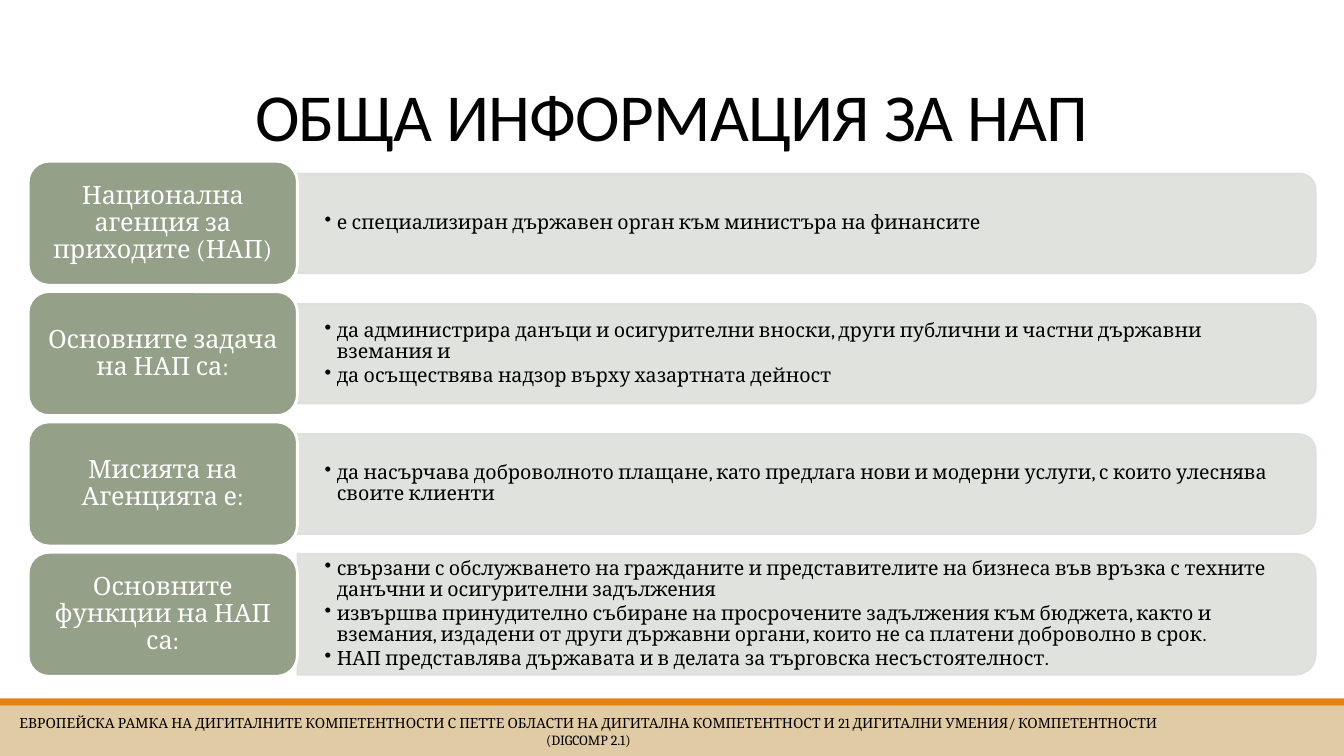
"""Builds a slide with general information about the НАП: four topics with their points."""
from lxml import etree
from pptx import Presentation
from pptx.dml.color import RGBColor
from pptx.enum.shapes import MSO_SHAPE
from pptx.enum.text import MSO_ANCHOR, PP_ALIGN
from pptx.oxml.ns import qn
from pptx.util import Inches, Pt

TITLE = "ОБЩА ИНФОРМАЦИЯ ЗА НАП"
TOPICS = [
    ("Национална агенция за приходите (НАП)", [
        "е специализиран държавен орган към министъра на финансите",
    ]),
    ("Основните задача на НАП са:", [
        "да администрира данъци и осигурителни вноски, други публични и частни държавни вземания и",
        "да осъществява надзор върху хазартната дейност",
    ]),
    ("Мисията на Агенцията е:", [
        "да насърчава доброволното плащане, като предлага нови и модерни услуги, "
        "с които улеснява своите клиенти",
    ]),
    ("Основните функции на НАП са:", [
        "свързани с обслужването на гражданите и представителите на бизнеса във връзка "
        "с техните данъчни и осигурителни задължения",
        "извършва принудително събиране на просрочените задължения към бюджета, както и вземания, "
        "издадени от други държавни органи, които не са платени доброволно в срок.",
        "НАП представлява държавата и в делата за търговска несъстоятелност.",
    ]),
]
FOOTER = ("ЕВРОПЕЙСКА РАМКА НА ДИГИТАЛНИТЕ КОМПЕТЕНТНОСТИ С ПЕТТЕ ОБЛАСТИ НА ДИГИТАЛНА "
          "КОМПЕТЕНТНОСТ И 21 ДИГИТАЛНИ УМЕНИЯ/ КОМПЕТЕНТНОСТИ (DIGCOMP 2.1)")

THEME = {
    "heading_font": "Calibri", "body_font": "Cambria",
    "ink": "000000", "paper": "FFFFFF",
    "tab": "94A088", "panel": "DCDFDA", "band": "E0CBA4", "stripe": "E48312",
    "title_size": 48, "tab_size": 18, "point_size": 14, "footer_size": 10,
}

SLIDE_WIDTH, SLIDE_HEIGHT = 13.33, 7.5
TAB_LEFT, TAB_WIDTH, TAB_HEIGHT = 0.28, 2.67, 1.23
FIRST_TOP, LAST_TOP = 1.6, 5.48
PANEL_LEFT, PANEL_WIDTH = TAB_LEFT + TAB_WIDTH, 10.1
PANEL_HEIGHT, TALL_PANEL_HEIGHT = 0.99, 1.2
PANEL_INSET = 0.05
BULLET_INDENT = 0.12


def set_alpha(color_format_parent, percent):
    """Make the solid colours under an element partly transparent."""
    for color in color_format_parent.iter(qn("a:srgbClr")):
        etree.SubElement(color, qn("a:alpha")).set("val", str(percent * 1000))


def add_block(slide, kind, left, top, width, height, fill, line=None, line_width=1):
    """Add a filled preset shape, outlined only when a line colour is given."""
    block = slide.shapes.add_shape(kind, Inches(left), Inches(top), Inches(width), Inches(height))
    block.shadow.inherit = False
    block.fill.solid()
    block.fill.fore_color.rgb = RGBColor.from_string(fill)
    if line:
        block.line.color.rgb = RGBColor.from_string(line)
        block.line.width = Pt(line_width)
    else:
        block.line.fill.background()
    return block


def add_box(slide, left, top, width, height):
    """Add an empty text box."""
    return slide.shapes.add_textbox(Inches(left), Inches(top), Inches(width), Inches(height))


def write(holder, lines, *, size, font=THEME["body_font"], color=THEME["ink"],
          align=PP_ALIGN.CENTER, anchor=MSO_ANCHOR.MIDDLE, insets=(0.1, 0.05),
          line_spacing=1.0, space_after=0, tracking=0, bullet=False):
    """Write one paragraph per line into a shape or text box."""
    frame = holder.text_frame
    frame.word_wrap = True
    frame.vertical_anchor = anchor
    frame.margin_left = frame.margin_right = Inches(insets[0])
    frame.margin_top = frame.margin_bottom = Inches(insets[1])
    for index, line in enumerate(lines):
        paragraph = frame.paragraphs[0] if index == 0 else frame.add_paragraph()
        paragraph.alignment = align
        paragraph.line_spacing = line_spacing
        paragraph.space_after = Pt(space_after)
        run = paragraph.add_run()
        run.text = line
        run.font.name = font
        run.font.size = Pt(size)
        run.font.color.rgb = RGBColor.from_string(color)
        if tracking:
            run.font._element.set("spc", str(round(tracking * 100)))
        if bullet:
            properties = paragraph._p.get_or_add_pPr()
            properties.set("marL", str(Inches(BULLET_INDENT)))
            properties.set("indent", str(-Inches(BULLET_INDENT)))
            etree.SubElement(properties, qn("a:buChar")).set("char", "•")


def add_panel(slide, middle, height, points):
    """Add a panel rounded on its right side, with its bulleted points."""
    panel = add_block(slide, MSO_SHAPE.ROUND_2_SAME_RECTANGLE,
                      PANEL_LEFT + (PANEL_WIDTH - height) / 2, middle - PANEL_WIDTH / 2,
                      height, PANEL_WIDTH, THEME["panel"], THEME["panel"], 1.25)
    panel.rotation = 90
    set_alpha(panel._element.spPr, 90)
    points_box = add_box(slide, PANEL_LEFT, middle - height / 2 + PANEL_INSET,
                         PANEL_WIDTH - PANEL_INSET, height - 2 * PANEL_INSET)
    write(points_box, points, size=THEME["point_size"], align=PP_ALIGN.LEFT,
          insets=(0.27, 0.14), line_spacing=0.9, space_after=2, bullet=True)


def add_topics(slide):
    """Stack the topics at an equal pitch, each a tab over its panel."""
    pitch = (LAST_TOP - FIRST_TOP) / (len(TOPICS) - 1)
    for row, (label, points) in enumerate(TOPICS):
        top = FIRST_TOP + row * pitch
        height = TALL_PANEL_HEIGHT if len(points) > 2 else PANEL_HEIGHT
        add_panel(slide, top + TAB_HEIGHT / 2, height, points)
        tab = add_block(slide, MSO_SHAPE.ROUNDED_RECTANGLE, TAB_LEFT, top, TAB_WIDTH, TAB_HEIGHT,
                        THEME["tab"], THEME["paper"], 2)
        write(tab, [label], size=THEME["tab_size"], color=THEME["paper"],
              insets=(0.07, 0.04), line_spacing=0.9)


def main():
    """Build and save the slide."""
    deck = Presentation()
    deck.slide_width, deck.slide_height = Inches(SLIDE_WIDTH), Inches(SLIDE_HEIGHT)
    slide = deck.slides.add_slide(deck.slide_layouts[6])

    add_block(slide, MSO_SHAPE.RECTANGLE, 0, 7, SLIDE_WIDTH, 0.5, THEME["band"])
    add_block(slide, MSO_SHAPE.RECTANGLE, 0, 6.93, SLIDE_WIDTH, 0.07, THEME["stripe"])
    write(add_box(slide, 0, 0, SLIDE_WIDTH, 1.59), [TITLE], size=THEME["title_size"],
          font=THEME["heading_font"], anchor=MSO_ANCHOR.BOTTOM, line_spacing=0.85, tracking=-0.5)
    add_topics(slide)
    write(add_box(slide, 0, 7.06, 11.67, 0.4), [FOOTER], size=THEME["footer_size"],
          insets=(0.04, 0.04))

    deck.save("out.pptx")


if __name__ == "__main__":
    main()
